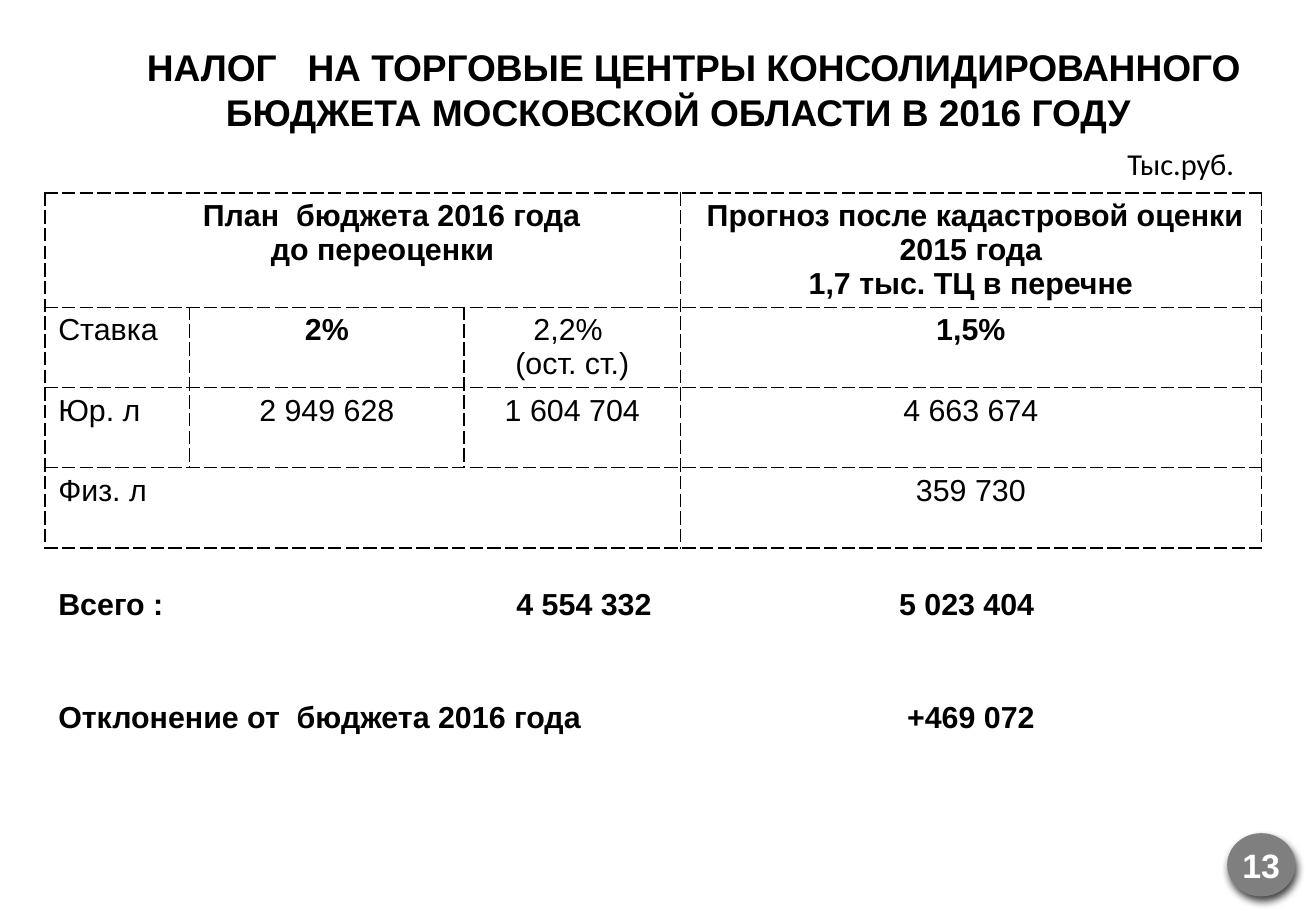
from lxml.etree import SubElement, fromstring
from pptx import Presentation
from pptx.dml.color import RGBColor
from pptx.enum.shapes import MSO_SHAPE
from pptx.enum.text import MSO_ANCHOR, PP_ALIGN
from pptx.oxml.ns import qn
from pptx.util import Inches, Pt

NS = 'xmlns:a="http://schemas.openxmlformats.org/drawingml/2006/main"'


def rgb(value):
    return RGBColor.from_string(value)


def add_run(p, text, size, bold=False, color="000000", font="Arial"):
    r = p.add_run()
    r.text = text
    r.font.size, r.font.bold, r.font.name = Pt(size), bold, font
    r.font.color.rgb = rgb(color)


prs = Presentation()
prs.slide_width, prs.slide_height = Inches(10.83), Inches(7.5)
s = prs.slides.add_slide(prs.slide_layouts[6])

# Tax table: (row, column, lines, bold, centred)
cells = [
    (0, 1, ["План  бюджета 2016 года", "до переоценки"], True, False),
    (0, 3, [" Прогноз после кадастровой оценки 2015 года", "1,7 тыс. ТЦ в перечне"], True, True),
    (1, 0, ["Ставка"], False, False),
    (1, 1, ["2%"], True, True),
    (1, 2, ["2,2% ", "(ост. ст.)"], False, True),
    (1, 3, ["1,5%"], True, True),
    (2, 0, ["Юр. л"], False, False),
    (2, 1, ["2 949 628"], False, True),
    (2, 2, ["1 604 704"], False, True),
    (2, 3, ["4 663 674"], False, True),
    (3, 0, ["Физ. л"], False, False),
    (3, 3, ["359 730"], False, True),
    (4, 0, ["Всего :\t4 554 332"], True, False),
    (4, 3, ["5 023 404 "], True, True),
    (5, 0, ["Отклонение от  бюджета 2016 года"], True, False),
    (5, 3, ["+469 072"], True, True),
]
widths = [1.19, 2.26, 1.78, 4.78]
heights = [0.94, 0.66, 0.66, 0.66, 1.21, 0.97]
tbl = s.shapes.add_table(6, 4, Inches(0.37), Inches(1.59),
                         Inches(sum(widths)), Inches(sum(heights))).table
tbl.first_row = tbl.horz_banding = False
for column, width in zip(tbl.columns, widths):
    column.width = Inches(width)
for row, height in zip(tbl.rows, heights):
    row.height = Inches(height)
for row, first in [(0, 1), (3, 0), (4, 0), (5, 0)]:
    tbl.cell(row, first).merge(tbl.cell(row, 2))

# Dashed grid on the first four rows, totals below without borders
for row in range(6):
    for col in range(4):
        cell = tbl.cell(row, col)
        cell.fill.background()
        cell.margin_left = cell.margin_right = Inches(0.11)
        cell.margin_top = Inches(0.33 if row == 4 else 0.05)
        sides = "LRTB" if row < 4 else "T" if row == 4 else ""
        if row == 0 and col < 2:
            sides = sides.replace("RL"[col], "")
        for i, side in enumerate("LRTB"):
            paint = "<a:noFill/>"
            if side in sides:
                paint = ('<a:solidFill><a:srgbClr val="000000"/></a:solidFill>'
                         '<a:prstDash val="sysDash"/>')
            cell._tc.get_or_add_tcPr().insert(
                i, fromstring(f'<a:ln{side} {NS} w="12700">{paint}</a:ln{side}>'))

# Table text
for row, col, lines, bold, centred in cells:
    tf = tbl.cell(row, col).text_frame
    for i, line in enumerate(lines):
        p = tf.add_paragraph() if i else tf.paragraphs[0]
        p.alignment = PP_ALIGN.CENTER if centred else PP_ALIGN.LEFT
        add_run(p, line, 18, bold)

# Indent of the second header line and tab stop of the total
pPr = tbl.cell(0, 1).text_frame.paragraphs[1]._p.get_or_add_pPr()
pPr.set("marL", str(Inches(0.56)))
pPr = tbl.cell(4, 0).text_frame.paragraphs[0]._p.get_or_add_pPr()
tabs = SubElement(pPr, qn("a:tabLst"))
SubElement(tabs, qn("a:tab"), pos=str(Inches(3.77)), algn="l")

# Unit label
tf = s.shapes.add_textbox(Inches(9.18), Inches(1.15), Inches(1.11), Inches(0.4)).text_frame
tf.word_wrap = False
add_run(tf.paragraphs[0], "Тыс.руб.", 18, font="Calibri")

# Page number badge
badge = s.shapes.add_shape(MSO_SHAPE.OVAL, Inches(10.11), Inches(6.87), Inches(0.54), Inches(0.5))
badge.fill.solid()
badge.fill.fore_color.rgb = rgb("7F7F7F")
badge.line.color.rgb = rgb("808080")
badge.line.width = Pt(1.5)
badge.shadow.inherit = False
badge._element.spPr.find(qn("a:effectLst")).append(fromstring(
    f'<a:outerShdw {NS} blurRad="{Pt(5)}" dist="{Pt(3.2)}" dir="{72 * 60000}">'
    '<a:srgbClr val="000000"><a:alpha val="75000"/></a:srgbClr></a:outerShdw>'))
tf = badge.text_frame
tf.margin_left = tf.margin_right = tf.margin_top = tf.margin_bottom = 0
tf.vertical_anchor = MSO_ANCHOR.MIDDLE
tf.word_wrap = False
p = tf.paragraphs[0]
p.alignment = PP_ALIGN.CENTER
add_run(p, "13", 20, True, "FFFFFF")

# Title
tf = s.shapes.add_textbox(Inches(0.76), Inches(0.32), Inches(9.73), Inches(0.84)).text_frame
tf.word_wrap = True
p = tf.paragraphs[0]
p.alignment = PP_ALIGN.CENTER
p.space_before = Pt(6)
p._p.get_or_add_pPr().set("indent", str(Inches(0.17)))
add_run(p, "НАЛОГ   НА ТОРГОВЫЕ ЦЕНТРЫ КОНСОЛИДИРОВАННОГО "
        "БЮДЖЕТА МОСКОВСКОЙ ОБЛАСТИ В 2016 ГОДУ ", 22, True)

prs.save("out.pptx")
